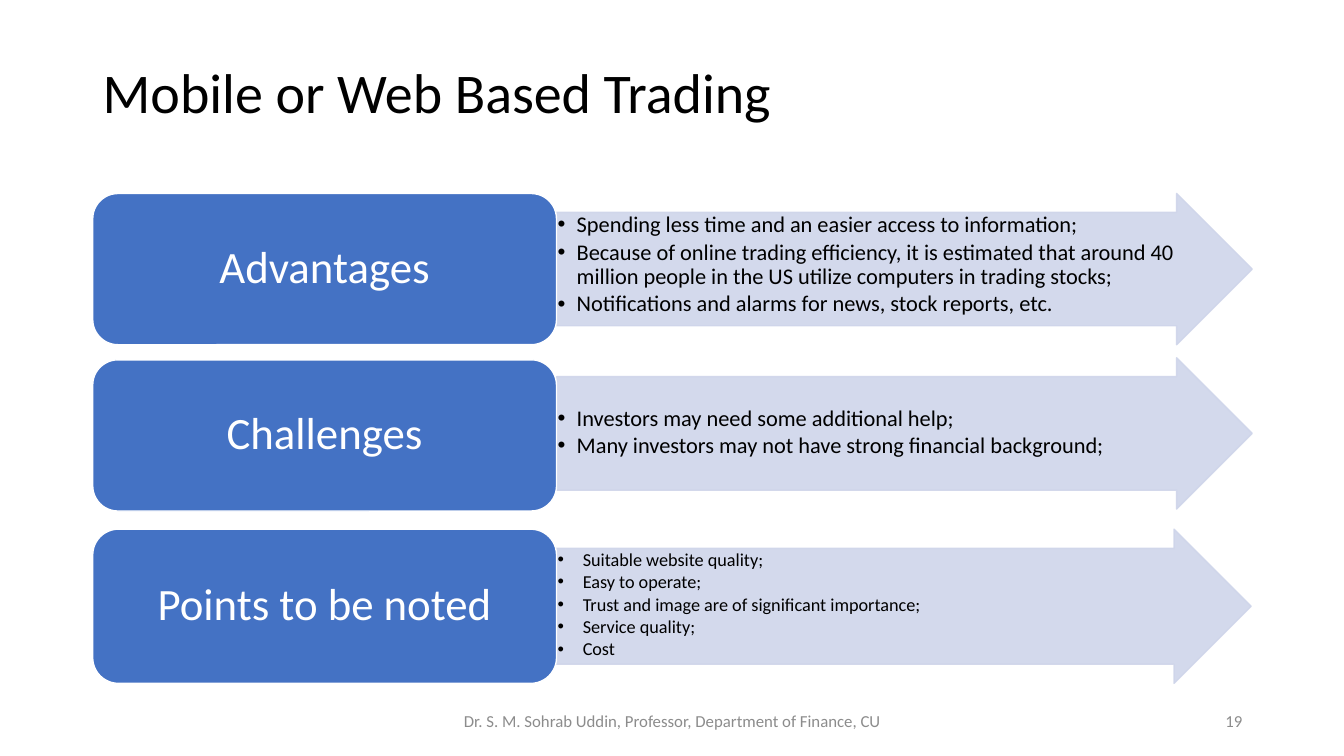
"""Build the mobile or web based trading slide."""
from dataclasses import dataclass

from lxml import etree
from pptx import Presentation
from pptx.dml.color import RGBColor
from pptx.enum import shapes, text
from pptx.oxml import ns
from pptx.util import Inches, Pt


@dataclass(frozen=True)
class Theme:
    font: str = "Calibri"
    ink: str = "000000"
    paper: str = "FFFFFF"
    muted: str = "8C8C8C"
    label: str = "4472C4"
    arrow: str = "CFD5EA"
    arrow_alpha: int = 90
    title_size: int = 40
    label_size: int = 32
    body_size: int = 16
    small_size: int = 13
    footer_size: int = 12


@dataclass(frozen=True)
class Row:
    label: str
    points: tuple
    arrow_left: float
    arrow_top: float
    label_top: float
    height: float
    size: int
    indent: float
    inset: float
    drop: float = 0


THEME = Theme()
ROWS = (
    Row("Advantages", (
        "Spending less time and an easier access to information;",
        "Because of online trading efficiency, it is estimated that around 40 "
        "million people in the US utilize computers in trading stocks;",
        "Notifications and alarms for news, stock reports, etc.",
    ), 5.52, 1.92, 1.92, 1.5, THEME.body_size, 0.19, 0.01),
    Row("Challenges", (
        "Investors may need some additional help;",
        "Many investors may not have strong financial background;",
    ), 5.52, 3.55, 3.57, 1.5, THEME.body_size, 0.19, 0.01, drop=0.29),
    Row("Points to be noted", (
        "Suitable website quality;",
        "Easy to operate;",
        "Trust and image are of significant importance;",
        "Service quality;",
        "Cost",
    ), 5.51, 5.25, 5.25, 1.53, THEME.small_size, 0.25, 0.02),
)
LABEL_LEFT, LABEL_WIDTH, ARROW_WIDTH = 0.92, 4.6, 6.9
SHAFT_RATIO, HEAD_RATIO = 0.75, 0.5


def add_bullet(p, indent):
    """Give a paragraph a hanging round bullet."""
    ppr = p._p.get_or_add_pPr()
    ppr.set("marL", str(Inches(indent)))
    ppr.set("indent", str(-Inches(indent)))
    etree.SubElement(ppr, ns.qn("a:buFont"), typeface="Arial")
    etree.SubElement(ppr, ns.qn("a:buChar"), char="•")


def write_text(sp, lines, size, color=THEME.ink, align=text.PP_ALIGN.LEFT,
               anchor=text.MSO_ANCHOR.MIDDLE, insets=(0.1, 0.05),
               spacing=None, after=0, indent=None):
    """Fill a shape with formatted paragraphs."""
    tf = sp.text_frame
    tf.word_wrap = True
    tf.vertical_anchor = anchor
    tf.margin_left = tf.margin_right = Inches(insets[0])
    tf.margin_top = tf.margin_bottom = Inches(insets[1])
    for i, line in enumerate(lines):
        p = tf.add_paragraph() if i else tf.paragraphs[0]
        p.alignment = align
        p.line_spacing = spacing
        p.space_after = Pt(after)
        if indent is not None:
            add_bullet(p, indent)
        r = p.add_run()
        r.text = line
        r.font.size = Pt(size)
        r.font.name = THEME.font
        r.font.color.rgb = RGBColor.from_string(color)


def add_text(s, box, lines, size, **style):
    """Add a text box at the given inches."""
    sp = s.shapes.add_textbox(*map(Inches, box))
    write_text(sp, lines, size, **style)


def add_block(s, kind, box, fill, line, alpha=None):
    """Add a filled and outlined preset shape."""
    sp = s.shapes.add_shape(kind, *map(Inches, box))
    sp.shadow.inherit = False
    sp.fill.solid()
    sp.line.width = Pt(1)
    for paint, color in ((sp.fill.fore_color, fill), (sp.line.color, line)):
        paint.rgb = RGBColor.from_string(color)
    if alpha is not None:
        for clr in sp._element.spPr.iter(ns.qn("a:srgbClr")):
            etree.SubElement(clr, ns.qn("a:alpha"), val=str(alpha * 1000))
    return sp


def add_row(s, row):
    """Add an arrow, its bullet list and its label."""
    arrow = add_block(s, shapes.MSO_SHAPE.RIGHT_ARROW,
                      (row.arrow_left, row.arrow_top, ARROW_WIDTH, row.height),
                      THEME.arrow, THEME.arrow, THEME.arrow_alpha)
    arrow.adjustments[0], arrow.adjustments[1] = SHAFT_RATIO, HEAD_RATIO

    shaft = row.height * SHAFT_RATIO
    top = row.arrow_top + (row.height - shaft) / 2 + row.drop
    width = ARROW_WIDTH - row.height * HEAD_RATIO * (1 - SHAFT_RATIO) * 3
    add_text(s, (row.arrow_left, top, width, shaft - row.drop),
             row.points, row.size, anchor=text.MSO_ANCHOR.TOP,
             insets=(row.inset, row.inset), spacing=0.9,
             after=0.15 * row.size, indent=row.indent)

    label = add_block(s, shapes.MSO_SHAPE.ROUNDED_RECTANGLE,
                      (LABEL_LEFT, row.label_top, LABEL_WIDTH, row.height),
                      THEME.label, THEME.paper)
    write_text(label, [row.label], THEME.label_size, color=THEME.paper,
               align=text.PP_ALIGN.CENTER, spacing=0.9)


def main():
    """Build and save the slide."""
    prs = Presentation()
    prs.slide_width, prs.slide_height = Inches(13.33), Inches(7.5)
    s = prs.slides.add_slide(prs.slide_layouts[6])
    add_text(s, (0.92, 0.4, 11.5, 1.1), ["Mobile or Web Based Trading"],
             THEME.title_size, spacing=0.9)
    for row in ROWS:
        add_row(s, row)
    add_text(s, (4.42, 6.95, 4.5, 0.4),
             ["Dr. S. M. Sohrab Uddin, Professor, Department of Finance, CU"],
             THEME.footer_size, color=THEME.muted, align=text.PP_ALIGN.CENTER)
    add_text(s, (9.42, 6.95, 3, 0.4), ["19"], THEME.footer_size,
             color=THEME.muted, align=text.PP_ALIGN.RIGHT)
    prs.save("out.pptx")


if __name__ == "__main__":
    main()
